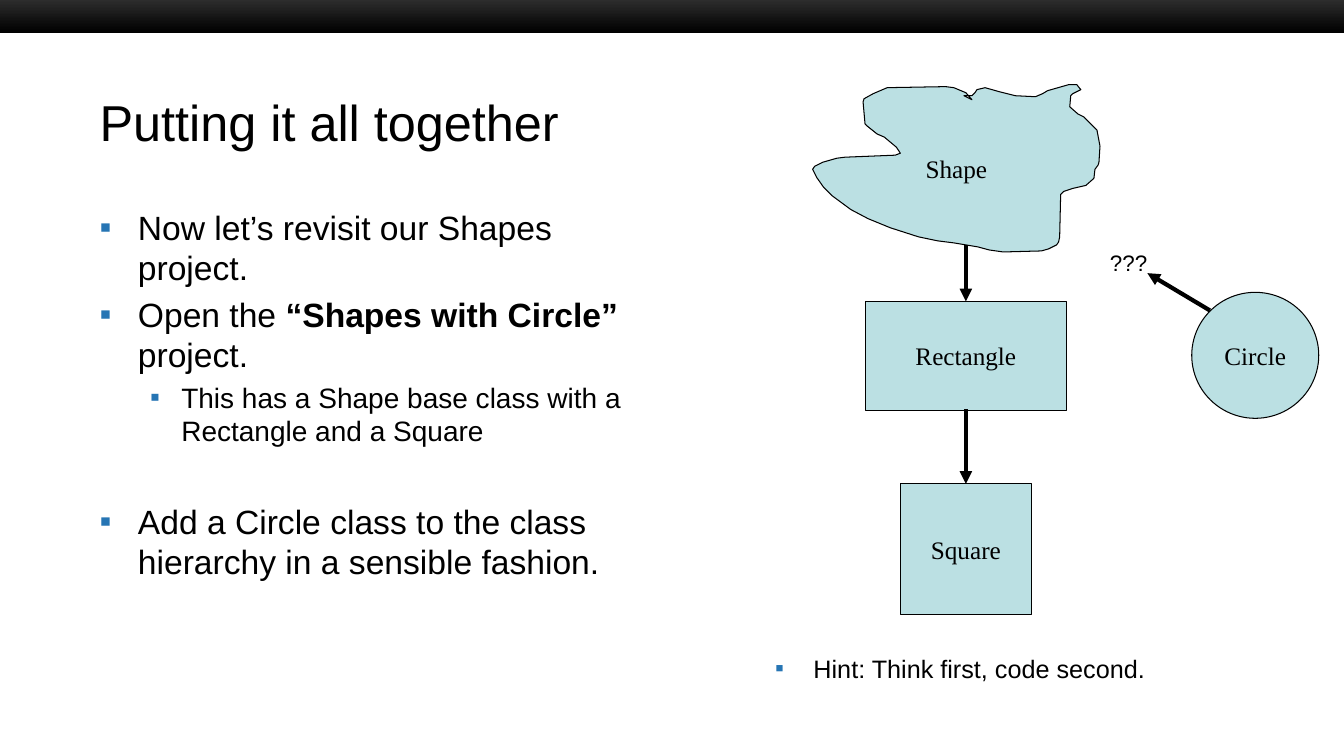
from lxml.etree import SubElement
from pptx import Presentation
from pptx.dml.color import RGBColor
from pptx.enum.shapes import MSO_CONNECTOR as Line, MSO_SHAPE as Kind
from pptx.enum.text import MSO_ANCHOR as Anchor, PP_ALIGN as Align
from pptx.oxml.ns import qn
from pptx.util import Inches, Pt

BLACK = RGBColor(0, 0, 0)
GREY = RGBColor(0x33, 0x33, 0x33)
AQUA = RGBColor(0xBB, 0xE0, 0xE3)
BLUE = "2675B4"

deck = Presentation()
deck.slide_width, deck.slide_height = Inches(13.33), Inches(7.5)
slide = deck.slides.add_slide(deck.slide_layouts[6])
shapes = slide.shapes


def add_text(box, paras, wrap=True, anchor=Anchor.TOP):
    """Each paragraph: level (None for no bullet), size, space before, runs."""
    x, y, w, h = map(Inches, box)
    frame = shapes.add_textbox(x, y, w, h).text_frame
    frame.word_wrap = wrap
    frame.vertical_anchor = anchor
    for i, (level, size, gap, runs) in enumerate(paras):
        para = frame.add_paragraph() if i else frame.paragraphs[0]
        para.space_before = Pt(gap)
        if level is not None:
            left, hang = ((0.38, 0.38), (0.81, 0.31))[level]
            props = para._p.get_or_add_pPr()
            props.set("marL", str(Inches(left)))
            props.set("indent", str(-Inches(hang)))
            color = SubElement(props, qn("a:buClr"))
            SubElement(color, qn("a:srgbClr"), val=BLUE)
            SubElement(props, qn("a:buFont"), typeface="Arial")
            SubElement(props, qn("a:buChar"), char="▪")
            para.level = level
        for text, bold in runs:
            run = para.add_run()
            run.text = text
            font = run.font
            font.name, font.size, font.bold = "Arial", Pt(size), bold
            font.color.rgb = BLACK


def dress(shape, name):
    """Class node: pale fill, thin outline, centred name."""
    shape.shadow.inherit = False
    shape.fill.solid()
    shape.fill.fore_color.rgb = AQUA
    shape.line.color.rgb = BLACK
    shape.line.width = Pt(0.75)
    frame = shape.text_frame
    frame.vertical_anchor = Anchor.MIDDLE
    para = frame.paragraphs[0]
    para.alignment = Align.CENTER
    run = para.add_run()
    run.text = name
    run.font.name, run.font.size = "Times New Roman", Pt(18)
    run.font.color.rgb = BLACK


# Top bar
bar = shapes.add_shape(Kind.RECTANGLE, 0, Inches(-0.05), deck.slide_width, Inches(0.38))
bar.shadow.inherit = False
bar.line.fill.background()
bar.fill.gradient()
bar.fill.gradient_angle = 270
for stop, color, place in zip(bar.fill.gradient_stops, (GREY, BLACK), (0, 1)):
    stop.color.rgb = color
    stop.position = place

# Title, bullets and hint
add_text((0.89, 0.83, 11.56, 0.75),
         [(None, 36, 0, [("Putting it all together", False)])], anchor=Anchor.MIDDLE)
add_text((0.89, 2, 5.67, 4.66), [
    (0, 24, 0, [("Now let’s revisit our Shapes project.", False)]),
    (0, 24, 4.8, [("Open the ", False), ("“Shapes with Circle” ", True), ("project.", False)]),
    (1, 20, 4, [("This has a Shape base class with a Rectangle and a Square", False)]),
    (0, 24, 38, [("Add a Circle class to the class hierarchy in a sensible fashion.", False)]),
])
add_text((7.59, 6.43, 4.36, 0.56), [(0, 18, 0, [("Hint: Think first, code second.", False)])])

# Shape blob, in hundredths of an inch
BLOB = [
    (964, 99), (958, 92), (946, 87), (938, 86), (880, 87), (866, 93), (857, 98),
    (856, 101), (858, 123), (860, 125), (870, 133), (877, 136), (889, 146),
    (893, 152), (888, 154), (838, 156), (830, 157), (816, 161), (808, 165),
    (806, 168), (810, 176), (817, 186), (825, 194), (844, 208), (861, 217),
    (883, 226), (911, 235), (930, 239), (946, 241), (970, 245), (981, 248),
    (995, 250), (1033, 249), (1040, 247), (1048, 243), (1050, 240), (1051, 235),
    (1052, 193), (1055, 190), (1064, 187), (1077, 184), (1085, 177), (1086, 168),
    (1089, 164), (1090, 161), (1091, 145), (1088, 129), (1080, 121), (1075, 116),
    (1069, 113), (1061, 106), (1062, 95), (1064, 93), (1072, 89), (1068, 84),
    (1060, 84), (1039, 90), (1034, 93), (1027, 96), (1007, 95), (999, 93),
    (991, 91), (977, 87), (969, 89), (967, 92), (964, 95), (956, 95),
]
pen = shapes.build_freeform(*BLOB[0], scale=Inches(0.01))
pen.add_line_segments(BLOB[1:], close=True)
dress(pen.convert_to_shape(), "Shape")

# Other classes
for name, kind, *box in [
    ("Rectangle", Kind.RECTANGLE, 8.58, 2.99, 2, 1.08),
    ("Square", Kind.RECTANGLE, 8.93, 4.8, 1.3, 1.3),
    ("Circle", Kind.OVAL, 11.82, 2.9, 1.26, 1.25),
]:
    dress(shapes.add_shape(kind, *map(Inches, box)), name)

# Arrows
for ends in [(9.58, 2.43, 9.58, 2.99), (9.58, 4.06, 9.58, 4.8), (12, 3.08, 11.38, 2.71)]:
    arrow = shapes.add_connector(Line.STRAIGHT, *map(Inches, ends))
    arrow.line.color.rgb = BLACK
    arrow.line.width = Pt(3)
    SubElement(arrow.line._get_or_add_ln(), qn("a:tailEnd"), type="triangle")
    SubElement(arrow._element.spPr, qn("a:effectLst"))

# Open question
add_text((10.91, 2.42, 0.58, 0.37), [(None, 16, 0, [("???", False)])], wrap=False)

deck.save("out.pptx")
